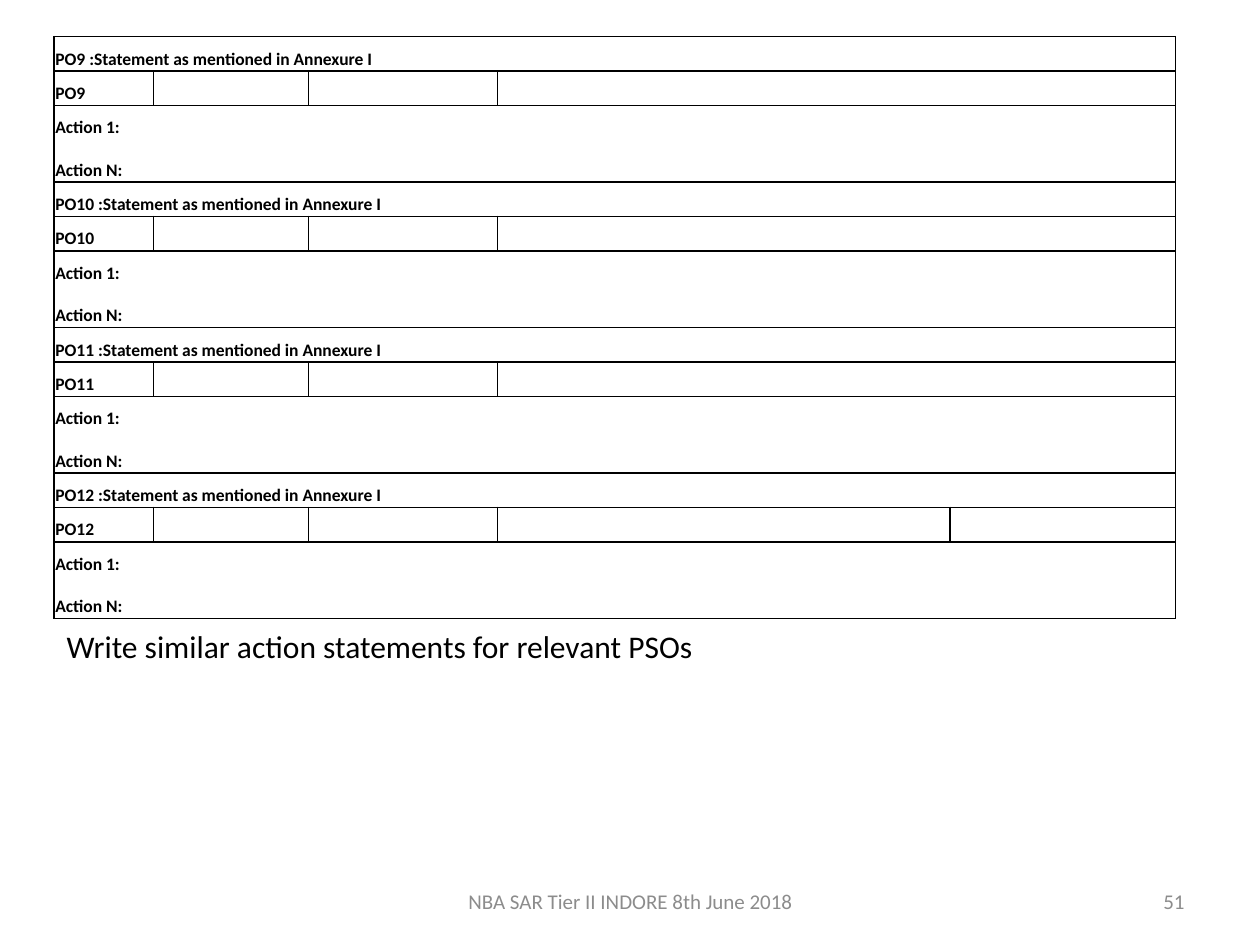
from lxml import etree
from pptx import Presentation
from pptx.dml.color import RGBColor
from pptx.enum.text import MSO_ANCHOR, PP_ALIGN
from pptx.oxml.ns import qn
from pptx.util import Inches, Pt

TOP, MID = MSO_ANCHOR.TOP, MSO_ANCHOR.MIDDLE
LEFT, MIDST, RIGHT = PP_ALIGN.LEFT, PP_ALIGN.CENTER, PP_ALIGN.RIGHT
WIDE, HIGH = 10, 7.5
WIDTHS = [0.79, 1.23, 1.5, 3.59, 1.79]
HEIGHTS = [0.16, 0.16, 0.32]
FIRST, LAST = 9, 12


def color(code):
    return RGBColor.from_string(code)


class Page:
    font, ink, gray = "Calibri", "000000", "8C8C8C"

    def __init__(self, deck):
        self.deck = deck
        self.slide = deck.slides.add_slide(deck.slide_layouts[6])

    def box(self, x, y, w, h):
        wide, high = self.deck.slide_width, self.deck.slide_height
        return [int(v) for v in (x * wide, y * high, w * wide, h * high)]

    def style(self, frame, size, ink, bold=False):
        for para in frame.paragraphs:
            for run in para.runs:
                run.font.name = self.font
                run.font.size = Pt(size)
                run.font.bold = bold
                run.font.color.rgb = color(ink)

    def text(self, words, place, size, ink, align=LEFT, anchor=TOP):
        frame = self.slide.shapes.add_textbox(*self.box(*place)).text_frame
        frame.word_wrap = True
        frame.vertical_anchor = anchor
        frame.text = words
        frame.paragraphs[0].alignment = align
        self.style(frame, size, ink)

    def edge(self, cell):
        props = cell._tc.get_or_add_tcPr()
        for spot, side in enumerate(("lnL", "lnR", "lnT", "lnB")):
            line = etree.Element(qn("a:" + side), w=str(Pt(1)))
            fill = etree.SubElement(line, qn("a:solidFill"))
            etree.SubElement(fill, qn("a:srgbClr"), val=self.ink)
            props.insert(spot, line)

    def cell(self, cell, words=""):
        cell.fill.background()
        self.edge(cell)
        cell.vertical_anchor = MID
        cell.margin_left = cell.margin_right = Inches(0.01)
        cell.margin_top = cell.margin_bottom = Inches(0.01)
        frame = cell.text_frame
        frame.text = words
        self.style(frame, 10, self.ink, True)
        for para in frame.paragraphs:
            if words:
                para.line_spacing = 1.5
                para.space_before = Pt(6)
            else:
                etree.SubElement(para._p, qn("a:endParaRPr"), sz="1000")

    def table(self, rows, place):
        shape = self.slide.shapes.add_table(
            len(rows), len(WIDTHS), *self.box(*place))
        grid = shape.table
        grid.first_row = grid.horz_banding = False
        for col, width in zip(grid.columns, WIDTHS):
            col.width = Inches(width)
        for r, (words, merge) in enumerate(rows):
            grid.rows[r].height = Inches(HEIGHTS[r % len(HEIGHTS)])
            for c in range(len(WIDTHS)):
                self.cell(grid.cell(r, c), words if c == 0 else "")
            if merge is not None:
                grid.cell(r, merge).merge(grid.cell(r, len(WIDTHS) - 1))
        shape.height = self.box(*place)[3]


def main():
    deck = Presentation()
    deck.slide_width, deck.slide_height = Inches(WIDE), Inches(HIGH)
    page = Page(deck)
    rows = []
    for num in range(FIRST, LAST + 1):
        rows += [
            (f"PO{num} :Statement as mentioned in Annexure I", 0),
            (f"PO{num}", None if num == LAST else 3),
            ("Action 1:\nAction N:", 0),
        ]
    page.table(rows, (0.043, 0.29 / HIGH, 0.89, 4.23 / HIGH))
    page.text("Write similar action statements for relevant PSOs",
              (0.043, 4.93 / HIGH, 0.78, 0.4 / HIGH), 18, page.ink)
    foot, tall = 6.95 / HIGH, 0.4 / HIGH
    page.text("NBA SAR Tier II INDORE 8th June 2018",
              (0.342, foot, 0.317, tall), 12, page.gray, MIDST, MID)
    page.text("51", (0.717, foot, 0.233, tall), 12, page.gray, RIGHT, MID)
    deck.save("out.pptx")


if __name__ == "__main__":
    main()
